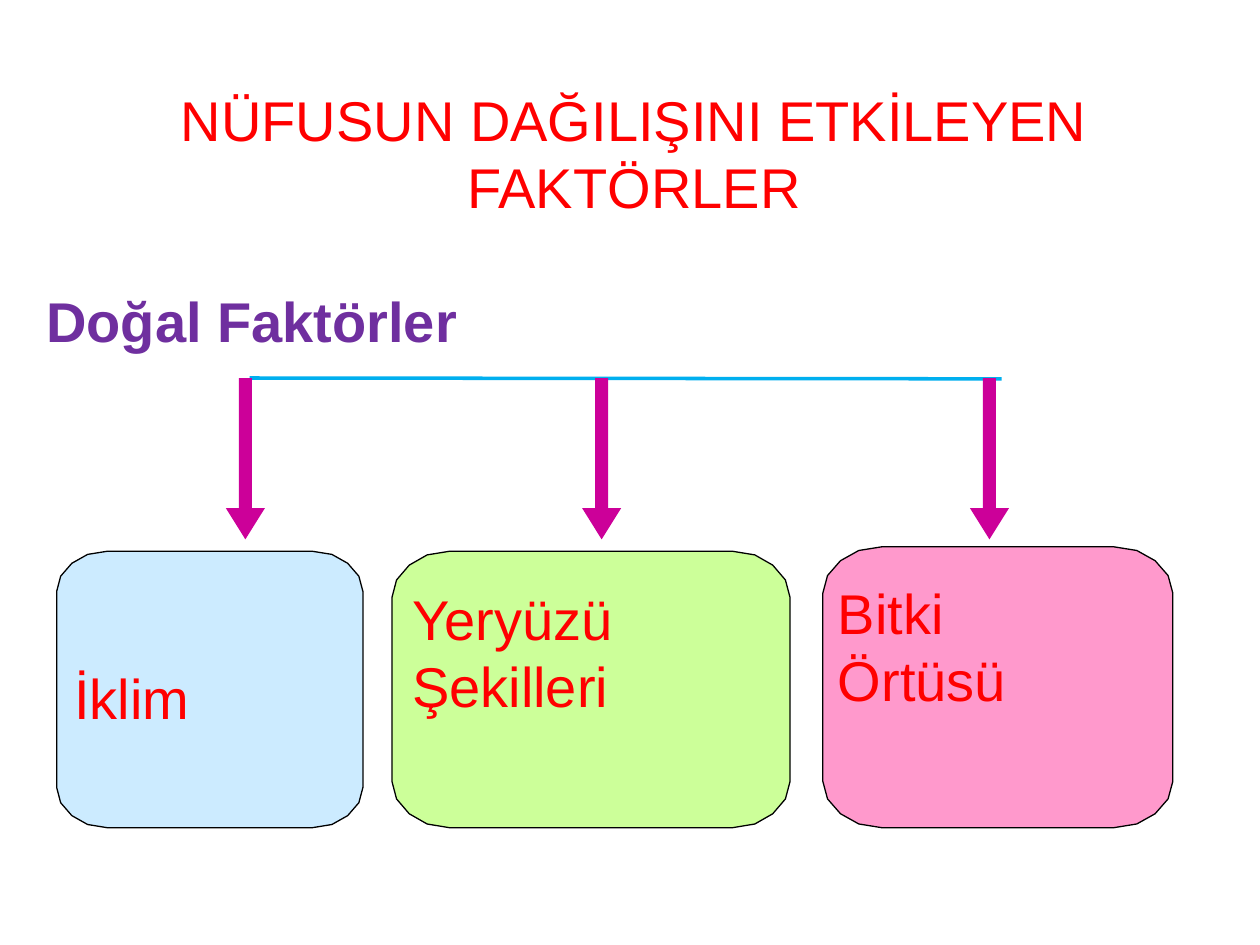
from lxml import etree
from pptx import Presentation
from pptx.dml.color import RGBColor
from pptx.enum.shapes import MSO_CONNECTOR, MSO_SHAPE
from pptx.enum.text import MSO_ANCHOR, PP_ALIGN
from pptx.oxml.ns import qn
from pptx.util import Pt

STRAIGHT = MSO_CONNECTOR.STRAIGHT
DOWN_ARROW = MSO_SHAPE.DOWN_ARROW
TOP = MSO_ANCHOR.TOP
LEFT, CENTER = PP_ALIGN.LEFT, PP_ALIGN.CENTER

RED = RGBColor(0xFF, 0x00, 0x00)
PURPLE = RGBColor(0x6F, 0x2F, 0x9F)
MAGENTA = RGBColor(0xCC, 0x00, 0x99)
CYAN = RGBColor(0x00, 0xAF, 0xEF)
BLACK = RGBColor(0x00, 0x00, 0x00)
PALE_BLUE = RGBColor(0xCC, 0xEB, 0xFF)
PALE_GREEN = RGBColor(0xCC, 0xFF, 0x99)
PINK = RGBColor(0xFF, 0x99, 0xCC)

# Content: text, alignment, colour, bold
HEADINGS = [
    ("NÜFUSUN DAĞILIŞINI ETKİLEYEN FAKTÖRLER", CENTER, RED, False),
    ("Doğal Faktörler", LEFT, PURPLE, True),
]
# Box and label as left, top, width, height; corner as width, height
FACTORS = [
    {"lines": ["İklim"], "fill": PALE_BLUE, "arrow_center": 140.2,
     "box": (32.4, 315, 175, 158), "corner": (29, 23),
     "label": (42.5, 379.5, 153.4, 39)},
    {"lines": ["Yeryüzü", "Şekilleri"], "fill": PALE_GREEN, "arrow_center": 343.8,
     "box": (224, 315, 227.5, 158), "corner": (33, 26.5),
     "label": (235.5, 334.3, 215, 85.7)},
    {"lines": ["Bitki", "Örtüsü"], "fill": PINK, "arrow_center": 565.4,
     "box": (470.2, 312.5, 200, 160.5), "corner": (33.7, 26.5),
     "label": (478.8, 330.5, 181.4, 85.7)},
]

FONT, FONT_SIZE, LINE_PITCH = "Arial", 32, 38.3
BAR_Y = 216
ARROW_WIDTH, ARROW_HEIGHT = 22.3, 92.2
STEM_RATIO, HEAD_RATIO = 0.33, 0.8
# Rounded corner as fractions of its width and height
CORNER_STEPS = [(1, 0), (0.61, 0.08), (0.3, 0.3), (0.08, 0.62), (0, 1)]


def add_text(slide, frame, paragraphs, insets=(0, 0, 0, 0), gap=0):
    text = slide.shapes.add_textbox(*map(Pt, frame)).text_frame
    text.word_wrap = True
    text.vertical_anchor = TOP
    text.margin_left, text.margin_top, text.margin_right, text.margin_bottom = map(Pt, insets)
    for i, (words, align, color, bold) in enumerate(paragraphs):
        paragraph = text.add_paragraph() if i else text.paragraphs[0]
        paragraph.alignment = align
        paragraph.line_spacing = Pt(LINE_PITCH)
        paragraph.space_before = Pt(gap if i else 0)
        run = paragraph.add_run()
        run.text = words
        run.font.name, run.font.size = FONT, Pt(FONT_SIZE)
        run.font.bold, run.font.color.rgb = bold, color


def rounded_outline(box, corner):
    left, top, width, height = box
    quarter = [(x * corner[0], y * corner[1]) for x, y in CORNER_STEPS]
    top_left = [(left + x, top + y) for x, y in quarter]
    bottom_left = [(left + x, top + height - y) for x, y in reversed(quarter)]
    left_side = top_left + bottom_left
    right_side = [(2 * left + width - x, y) for x, y in reversed(left_side)]
    return left_side + right_side


def add_box(slide, box, corner, fill):
    points = [(Pt(x), Pt(y)) for x, y in rounded_outline(box, corner)]
    builder = slide.shapes.build_freeform(*points[0])
    builder.add_line_segments(points[1:], close=True)
    shape = builder.convert_to_shape()
    shape.shadow.inherit = False
    shape.fill.solid()
    shape.fill.fore_color.rgb = fill
    shape.line.color.rgb = BLACK
    shape.line.width = Pt(0.75)


def add_arrow(slide, center):
    arrow = slide.shapes.add_shape(
        DOWN_ARROW, Pt(center - ARROW_WIDTH / 2), Pt(BAR_Y), Pt(ARROW_WIDTH), Pt(ARROW_HEIGHT))
    arrow.adjustments[0], arrow.adjustments[1] = STEM_RATIO, HEAD_RATIO
    arrow.shadow.inherit = False
    arrow.fill.solid()
    arrow.fill.fore_color.rgb = MAGENTA
    arrow.line.fill.background()


def main():
    deck = Presentation()
    deck.slide_width, deck.slide_height = Pt(720), Pt(540)
    slide = deck.slides.add_slide(deck.slide_layouts[6])

    # Bar that the arrows hang from
    bar = slide.shapes.add_connector(STRAIGHT, Pt(142.6), Pt(BAR_Y), Pt(572.4), Pt(BAR_Y + 0.5))
    bar.line.color.rgb = CYAN
    bar.line.width = Pt(2)
    etree.SubElement(bar.element.spPr, qn("a:effectLst"))

    # Factors: arrow, box and label
    for factor in FACTORS:
        add_arrow(slide, factor["arrow_center"])
        add_box(slide, factor["box"], factor["corner"], factor["fill"])
        add_text(slide, factor["label"],
                 [(line, LEFT, RED, False) for line in factor["lines"]])

    # Title and section heading
    add_text(slide, (19.4, 6, 686, 201), HEADINGS, insets=(7.2, 43, 7.2, 3.6), gap=LINE_PITCH)

    deck.save("out.pptx")


if __name__ == "__main__":
    main()
